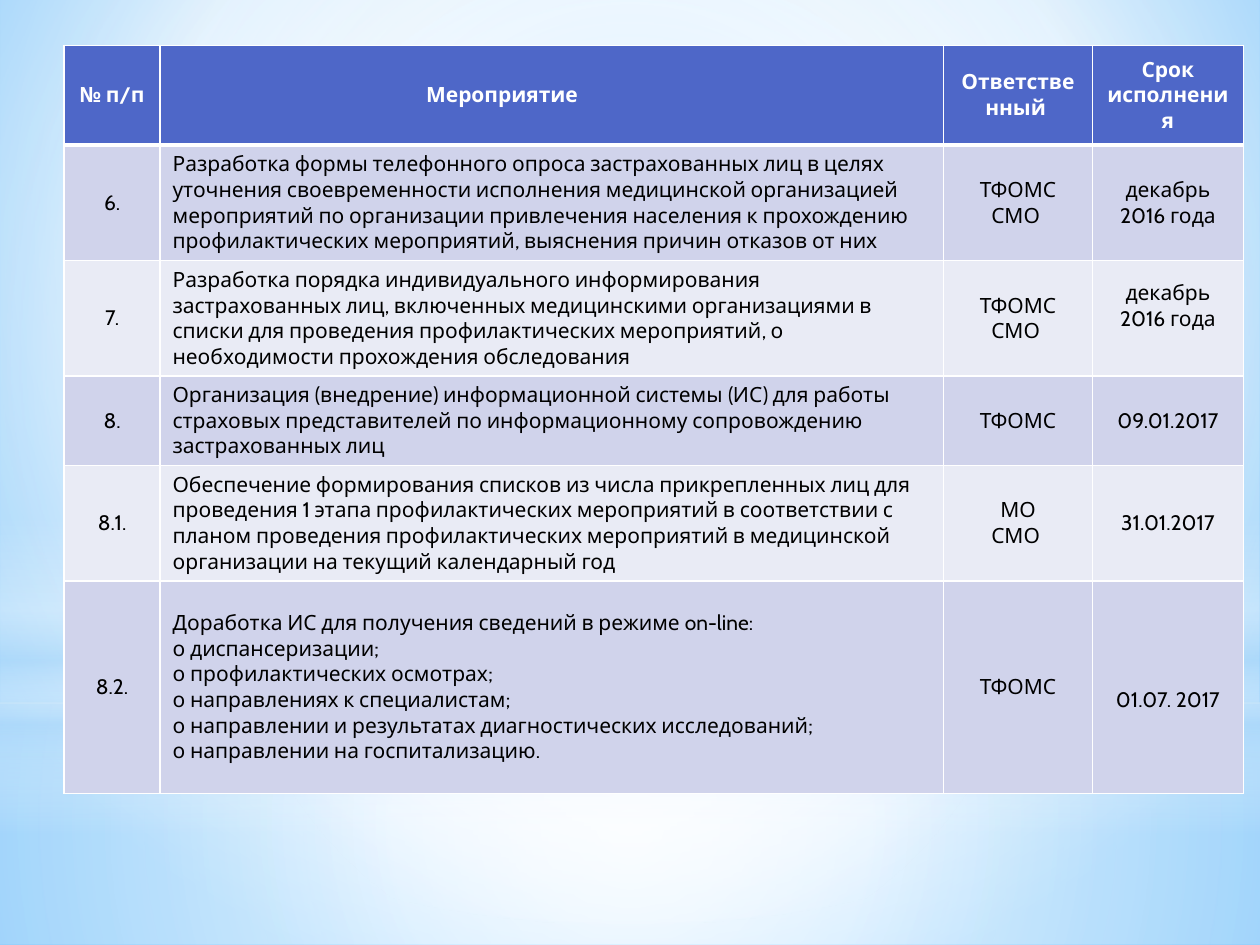
from lxml import etree
from pptx import Presentation
from pptx.dml.color import RGBColor
from pptx.enum.shapes import MSO_SHAPE
from pptx.enum.text import MSO_ANCHOR, PP_ALIGN
from pptx.oxml.ns import qn
from pptx.util import Inches, Pt

RECTANGLE, OVAL = MSO_SHAPE.RECTANGLE, MSO_SHAPE.OVAL
MIDDLE = MSO_ANCHOR.MIDDLE
LEFT, CENTER = PP_ALIGN.LEFT, PP_ALIGN.CENTER

FONT = "Cabin"
WHITE, BLACK, SKY = "FFFFFF", "000000", "B4DCFA"
HEADER_FILL = "4E67C8"
BAND_FILLS = ["E9EBF5", "D0D3EB"]
MIDPOINT = (50, 50, 50, 50)

COLUMN_WIDTHS = [0.76, 6.22, 1.18, 1.2]
ROW_HEIGHTS = [0.79, 0.92, 0.91, 0.71, 0.91, 1.69]
ROWS = [
    ["№ п/п", "Мероприятие", "Ответственный ", "Срок исполнения"],
    ["6.",
     "Разработка формы телефонного опроса застрахованных лиц в целях уточнения "
     "своевременности исполнения медицинской организацией мероприятий по организации "
     "привлечения населения к прохождению профилактических мероприятий, выяснения "
     "причин отказов от них",
     "ТФОМС\nСМО ", "декабрь 2016 года"],
    ["7.",
     "Разработка порядка индивидуального информирования застрахованных лиц, включенных "
     "медицинскими организациями в списки для проведения профилактических мероприятий, "
     "о необходимости прохождения обследования",
     "ТФОМС\nСМО ", "декабрь 2016 года"],
    ["8.",
     "Организация (внедрение) информационной системы (ИС) для работы страховых "
     "представителей по информационному сопровождению застрахованных лиц",
     "ТФОМС", "09.01.2017"],
    ["8.1.",
     "Обеспечение формирования списков из числа прикрепленных лиц для проведения 1 этапа "
     "профилактических мероприятий в соответствии с планом проведения профилактических "
     "мероприятий в медицинской организации на текущий календарный год",
     "МО\nСМО ", "31.01.2017"],
    ["8.2.",
     "Доработка ИС для получения сведений в режиме on-line:\n"
     "о диспансеризации;\n"
     "о профилактических осмотрах;\n"
     "о направлениях к специалистам;\n"
     "о направлении и результатах диагностических исследований;\n"
     "о направлении на госпитализацию.",
     "ТФОМС", "01.07. 2017"],
]


def color(hex_value):
    return RGBColor.from_string(hex_value)


def set_gradient(fill, owner, stops, focus=None, angle=0):
    """Fill with (position, colour, opacity) stops: radial with a focus, else linear."""
    fill.gradient()
    gradient = owner.find(".//" + qn("a:gradFill"))
    for child in list(gradient):
        gradient.remove(child)
    stop_list = etree.SubElement(gradient, qn("a:gsLst"))
    for position, hex_value, opacity in stops:
        stop = etree.SubElement(stop_list, qn("a:gs"), pos=str(position * 1000))
        tint = etree.SubElement(stop, qn("a:srgbClr"), val=hex_value)
        if opacity < 100:
            etree.SubElement(tint, qn("a:alpha"), val=str(opacity * 1000))
    if focus:
        radial = etree.SubElement(gradient, qn("a:path"), path="circle")
        edges = {edge: str(value * 1000) for edge, value in zip("ltrb", focus)}
        etree.SubElement(radial, qn("a:fillToRect"), edges)
    else:
        etree.SubElement(gradient, qn("a:lin"), ang=str(angle * 60000), scaled="0")


def add_glow(slide, kind, top, height, stops, focus=None, angle=0):
    """Add a full-width translucent shape of the backdrop."""
    glow = slide.shapes.add_shape(kind, 0, Inches(top), Inches(10), Inches(height))
    glow.shadow.inherit = False
    glow.line.fill.background()
    set_gradient(glow.fill, glow._element, stops, focus, angle)


def add_backdrop(slide):
    set_gradient(slide.background.fill, slide._element,
                 [(0, "9ED5FF", 100), (60, WHITE, 100), (100, "5BB9FF", 100)],
                 (20, 10, 20, 60))
    add_glow(slide, RECTANGLE, 5.58, 1.92,
             [(0, WHITE, 91), (37, WHITE, 76), (100, SKY, 79)], MIDPOINT)
    add_glow(slide, RECTANGLE, 0, 5.58,
             [(0, WHITE, 89), (48, WHITE, 62), (100, SKY, 79)], MIDPOINT)
    add_glow(slide, RECTANGLE, 4.12, 2.5,
             [(0, WHITE, 0), (29, WHITE, 30), (45, SKY, 40),
              (55, WHITE, 26), (65, SKY, 60), (100, WHITE, 0)], angle=90)
    add_glow(slide, OVAL, 1.75, 5.58, [(0, WHITE, 100), (56, WHITE, 0)], MIDPOINT)


def set_borders(cell, top, bottom):
    properties = cell._tc.get_or_add_tcPr()
    for side, width in (("L", 1), ("R", 1), ("T", top), ("B", bottom)):
        line = etree.SubElement(properties, qn("a:ln" + side), w=str(Pt(width)))
        solid = etree.SubElement(line, qn("a:solidFill"))
        etree.SubElement(solid, qn("a:srgbClr"), val=WHITE)


def fill_cell(cell, text, fill, align, font_color, bold):
    cell.fill.solid()
    cell.fill.fore_color.rgb = color(fill)
    cell.vertical_anchor = MIDDLE
    cell.text_frame.text = text
    for para in cell.text_frame.paragraphs:
        para.alignment = align
        para.font.name = FONT
        para.font.size = Pt(12)
        para.font.bold = bold
        para.font.color.rgb = color(font_color)


def add_plan_table(slide):
    table = slide.shapes.add_table(
        len(ROWS), len(COLUMN_WIDTHS), Inches(0.51), Inches(0.36),
        Inches(sum(COLUMN_WIDTHS)), Inches(sum(ROW_HEIGHTS))).table
    for column, width in zip(table.columns, COLUMN_WIDTHS):
        column.width = Inches(width)
    for row, height in zip(table.rows, ROW_HEIGHTS):
        row.height = Inches(height)
    for r, texts in enumerate(ROWS):
        header = r == 0
        for c, text in enumerate(texts):
            cell = table.cell(r, c)
            set_borders(cell, 3 if r == 1 else 1, 3 if header else 1)
            fill_cell(cell, text,
                      HEADER_FILL if header else BAND_FILLS[r % 2],
                      LEFT if c == 1 and not header else CENTER,
                      WHITE if header else BLACK, header)
    # Three cells sit off centre
    table.cell(0, 1).margin_right = Inches(0.89)
    table.cell(2, 3).margin_bottom = Inches(0.25)
    table.cell(5, 3).margin_top = Inches(0.25)


def main():
    deck = Presentation()
    deck.slide_width, deck.slide_height = Inches(10), Inches(7.5)
    slide = deck.slides.add_slide(deck.slide_layouts[6])
    add_backdrop(slide)
    add_plan_table(slide)
    deck.save("out.pptx")


if __name__ == "__main__":
    main()
